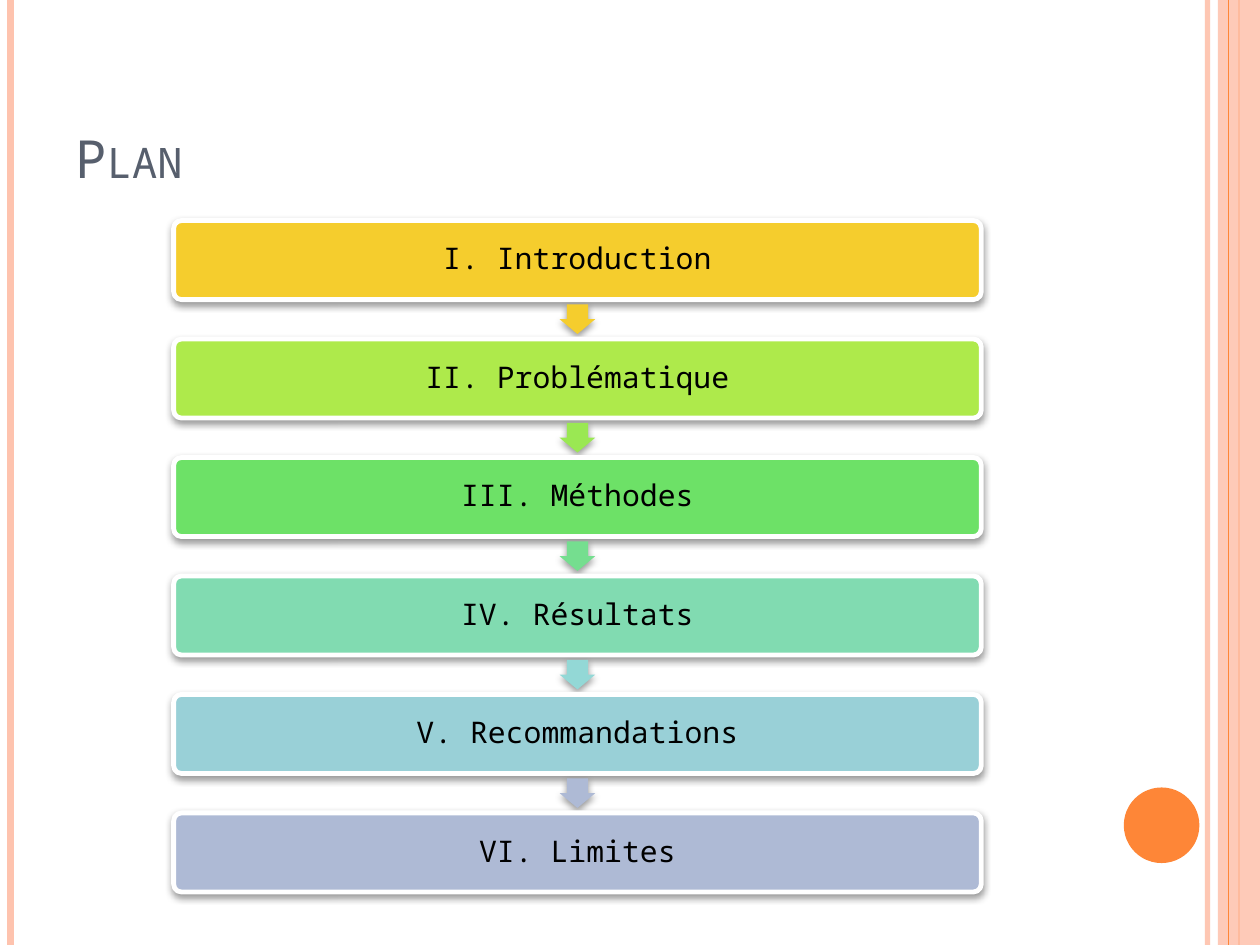
from dataclasses import dataclass

from lxml.etree import SubElement
from pptx import Presentation
from pptx.dml.color import RGBColor
from pptx.enum.shapes import MSO_CONNECTOR, MSO_SHAPE
from pptx.enum.text import MSO_ANCHOR, PP_ALIGN
from pptx.oxml.ns import qn
from pptx.shapes.autoshape import Shape
from pptx.util import Pt

FONT = "Noto Sans Mono"
BLACK = RGBColor(0x00, 0x00, 0x00)
WHITE = RGBColor(0xFF, 0xFF, 0xFF)
SLATE = RGBColor(0x57, 0x5F, 0x6D)
ORANGE = RGBColor(0xFE, 0x86, 0x37)
PEACH = RGBColor(0xFE, 0xC3, 0xAE)
YELLOW = RGBColor(0xF5, 0xCD, 0x2D)
LIME = RGBColor(0xAE, 0xEA, 0x4B)
LIGHT_GREEN = RGBColor(0x9A, 0xE8, 0x53)
GREEN = RGBColor(0x6D, 0xE1, 0x67)
MINT = RGBColor(0x75, 0xDE, 0x8F)
SEA_GREEN = RGBColor(0x81, 0xDB, 0xB1)
AQUA = RGBColor(0x93, 0xD8, 0xD6)
SKY = RGBColor(0x99, 0xD0, 0xD7)
LAVENDER = RGBColor(0xAE, 0xBA, 0xD5)

SLIDE_W, SLIDE_H = 720, 540
STEP_X, STEP_Y, STEP_W, STEP_H = 99.2, 126, 461.5, 45.2
STEP_PITCH = 67.7
ARROW_LENGTH, ARROW_BREADTH = 16.9, 20.3


@dataclass
class Step:
    text: str
    color: RGBColor
    arrow: RGBColor | None = None


@dataclass
class Stripe:
    x: float
    width: float
    color: RGBColor
    opacity: int = 100


STEPS = [
    Step("I. Introduction", YELLOW, YELLOW),
    Step("II. Problématique", LIME, LIGHT_GREEN),
    Step("III. Méthodes", GREEN, MINT),
    Step("IV. Résultats", SEA_GREEN, AQUA),
    Step("V. Recommandations", SKY, LAVENDER),
    Step("VI. Limites", LAVENDER),
]
BACK_STRIPES = [
    Stripe(690, 3, PEACH, 93),
    Stripe(6, 4.5, PEACH),
    Stripe(708, 1.5, ORANGE),
]
FRONT_STRIPE = Stripe(702, 0.75, ORANGE)


def set_opacity(sp_pr, percent: int) -> None:
    color = next(sp_pr.iter(qn("a:srgbClr")))
    SubElement(color, qn("a:alpha"), val=str(percent * 1000))


def add_stripe(s, stripe: Stripe) -> None:
    x = Pt(stripe.x)
    line = s.shapes.add_connector(MSO_CONNECTOR.STRAIGHT, x, 0, x, Pt(SLIDE_H))
    line.line.width = Pt(stripe.width)
    line.line.color.rgb = stripe.color
    sp_pr = line._element.spPr
    if stripe.opacity < 100:
        set_opacity(sp_pr, stripe.opacity)
    SubElement(sp_pr, qn("a:effectLst"))


def add_filled(s, kind: MSO_SHAPE, x: float, y: float, w: float, h: float,
               color: RGBColor) -> Shape:
    sp = s.shapes.add_shape(kind, Pt(x), Pt(y), Pt(w), Pt(h))
    sp.shadow.inherit = False
    sp.fill.solid()
    sp.fill.fore_color.rgb = color
    sp.line.fill.background()
    return sp


def add_shadow(sp: Shape) -> None:
    effects = sp._element.spPr.find(qn("a:effectLst"))
    shadow = SubElement(effects, qn("a:outerShdw"), blurRad=str(Pt(4)),
                        dist=str(Pt(2)), dir="5400000", rotWithShape="0")
    color = SubElement(shadow, qn("a:srgbClr"), val=str(BLACK))
    SubElement(color, qn("a:alpha"), val="40000")


def write_text(sp: Shape, text: str, *, size: float, color: RGBColor,
               align: PP_ALIGN = PP_ALIGN.LEFT,
               anchor: MSO_ANCHOR = MSO_ANCHOR.MIDDLE,
               inset: float | None = None, spacing: float = 1,
               small_caps: bool = False) -> None:
    tf = sp.text_frame
    tf.word_wrap = True
    tf.vertical_anchor = anchor
    if inset is not None:
        tf.margin_left = tf.margin_right = Pt(inset)
        tf.margin_top = tf.margin_bottom = Pt(inset)
    p = tf.paragraphs[0]
    p.alignment = align
    p.line_spacing = spacing
    r = p.add_run()
    r.text = text
    r.font.name = FONT
    r.font.size = Pt(size)
    r.font.color.rgb = color
    if small_caps:
        r.font._element.set("cap", "small")


def add_step(s, step: Step, y: float) -> None:
    box = add_filled(s, MSO_SHAPE.ROUNDED_RECTANGLE, STEP_X, y, STEP_W, STEP_H,
                     step.color)
    box.adjustments[0] = 0.1
    box.line.color.rgb = WHITE
    box.line.width = Pt(2.75)
    add_shadow(box)
    write_text(box, step.text, size=17, color=BLACK, align=PP_ALIGN.CENTER,
               inset=5, spacing=0.9)
    if step.arrow is None:
        return
    # The arrow is centred in the gap below the box and turned downwards
    center_x = STEP_X + STEP_W / 2
    center_y = y + (STEP_H + STEP_PITCH) / 2
    arrow = add_filled(s, MSO_SHAPE.RIGHT_ARROW, center_x - ARROW_LENGTH / 2,
                       center_y - ARROW_BREADTH / 2, ARROW_LENGTH,
                       ARROW_BREADTH, step.arrow)
    arrow.rotation = 90
    arrow.adjustments[0] = 0.6
    arrow.adjustments[1] = 0.5
    add_shadow(arrow)


def main() -> None:
    prs = Presentation()
    prs.slide_width, prs.slide_height = Pt(SLIDE_W), Pt(SLIDE_H)
    s = prs.slides.add_slide(prs.slide_layouts[6])

    # Side stripes, band and disc
    for stripe in BACK_STRIPES:
        add_stripe(s, stripe)
    band = add_filled(s, MSO_SHAPE.RECTANGLE, 696, 0, 24, SLIDE_H, PEACH)
    set_opacity(band._element.spPr, 87)
    add_stripe(s, FRONT_STRIPE)
    add_filled(s, MSO_SHAPE.OVAL, 642.2, 450, 43.2, 43.2, ORANGE)

    # Title
    title = s.shapes.add_textbox(Pt(36), Pt(21.6), Pt(588), Pt(90))
    write_text(title, "Plan", size=30, color=SLATE, anchor=MSO_ANCHOR.BOTTOM,
               small_caps=True)

    # Outline steps
    for i, step in enumerate(STEPS):
        add_step(s, step, STEP_Y + i * STEP_PITCH)

    prs.save("out.pptx")


if __name__ == "__main__":
    main()
